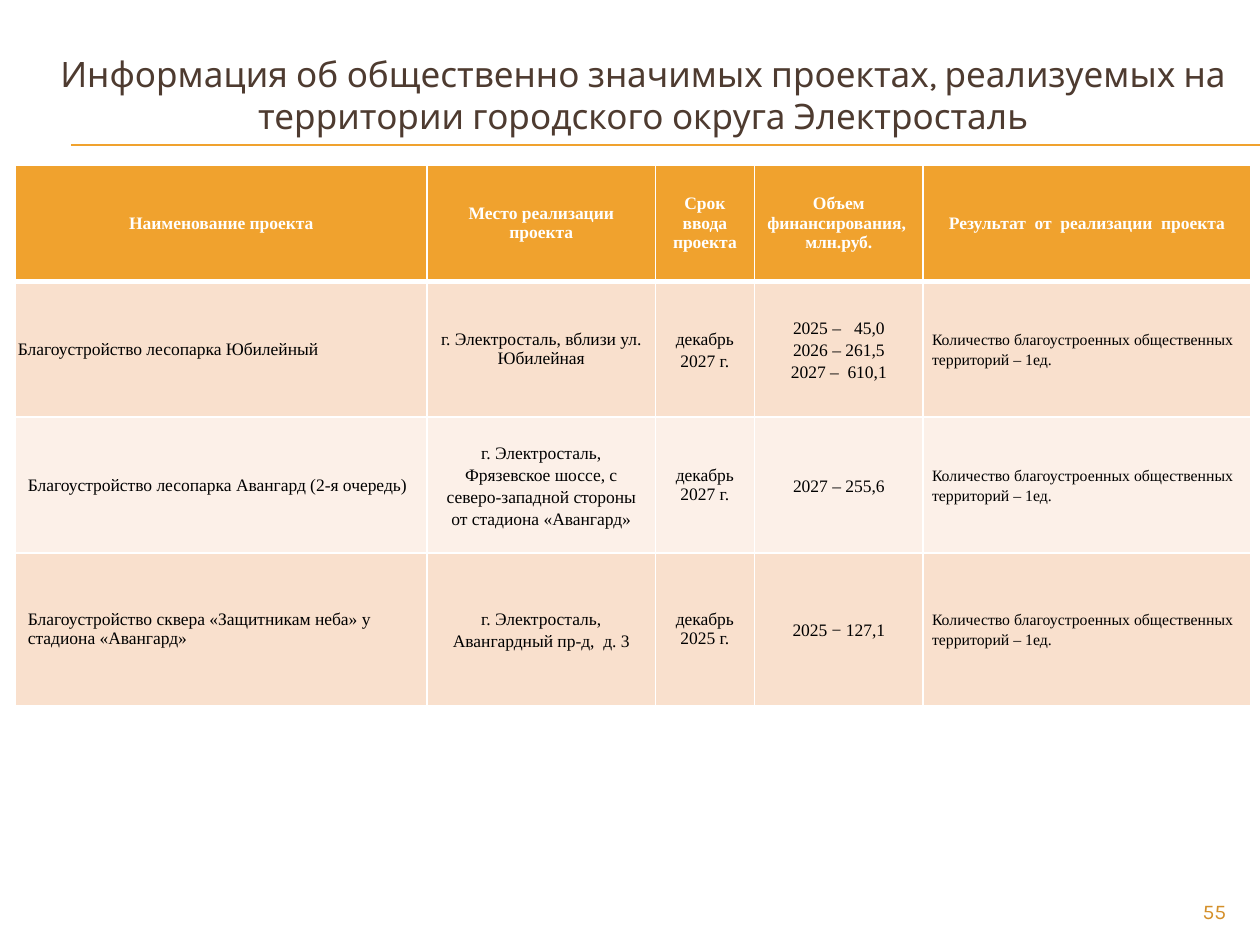
"""Build a slide with a table of public projects in a city district."""
from lxml.etree import SubElement
from pptx import Presentation
from pptx.dml.color import RGBColor
from pptx.enum.shapes import MSO_CONNECTOR
from pptx.enum.text import MSO_ANCHOR, PP_ALIGN
from pptx.oxml.ns import qn
from pptx.util import Cm, Pt

THEME = {
    "heading_font": "Karla", "table_font": "Times New Roman",
    "title": "4E3B30", "accent": "F0A22E", "number": "D48F29",
    "white": "FFFFFF", "black": "000000", "bands": ("F9E0CD", "FCF0E8"),
    "title_size": 20, "number_size": 12, "table_size": 10, "result_size": 9,
    "rule_width": 0.75, "border": 1, "header_border": 3,
}
TITLE = ("Информация об общественно значимых проектах, реализуемых на "
         "территории городского округа Электросталь")
PAGE_NUMBER = "55"
HEADER = ("Наименование проекта", "Место реализации проекта", "Срок ввода проекта",
          "Объем финансирования, \nмлн.руб.", "Результат  от  реализации  проекта")
RESULT = "Количество благоустроенных общественных территорий – 1ед."
PROJECTS = (
    ("Благоустройство лесопарка Юбилейный", "г. Электросталь, вблизи ул. Юбилейная",
     "декабрь 2027 г.", "2025 –   45,0\n2026 – 261,5\n2027 –  610,1", RESULT),
    ("Благоустройство лесопарка Авангард (2-я очередь)",
     "г. Электросталь, Фрязевское шоссе, с северо-западной стороны от стадиона «Авангард»",
     "декабрь 2027 г.", "2027 – 255,6", RESULT),
    ("Благоустройство сквера «Защитникам неба» у стадиона «Авангард»",
     "г. Электросталь, Авангардный пр-д,  д. 3", "декабрь 2025 г.", "2025 − 127,1", RESULT),
)
COLUMN_WIDTHS = (8.3, 4.6, 2, 3.4, 6.6)
ROW_HEIGHTS = (2.34, 2.74, 2.74, 3.07)
LINE_SPACING = (
    (1, 1, 1, 1, 1),
    (1, 1, 1.15, 1.15, 1.15),
    (1, 1.15, 1, 1.15, 1.15),
    (1, 1.15, 1, 1.15, 1.15),
)


def set_all(target, values):
    for name, value in values.items():
        setattr(target, name, value)


def write(frame, text, size, color, font, align, spacing=1, bold=False):
    for index, line in enumerate(text.split("\n")):
        para = frame.add_paragraph() if index else frame.paragraphs[0]
        set_all(para, {"alignment": align, "line_spacing": spacing})
        span = para.add_run()
        span.text = line
        set_all(span.font, {"size": Pt(size), "name": font, "bold": bold})
        span.font.color.rgb = RGBColor.from_string(color)


def add_text(page, place, text, anchor, *style):
    box = page.shapes.add_textbox(*map(Cm, place))
    set_all(box.text_frame, {"word_wrap": True, "vertical_anchor": anchor})
    write(box.text_frame, text, *style)


def add_rule(page, left, right, top):
    rule = page.shapes.add_connector(
        MSO_CONNECTOR.STRAIGHT, Cm(left), Cm(top), Cm(right), Cm(top))
    rule.line.color.rgb = RGBColor.from_string(THEME["accent"])
    rule.line.width = Pt(THEME["rule_width"])
    SubElement(rule.element.spPr, qn("a:effectLst"))


def paint_cell(cell, fill, widths):
    properties = cell._tc.get_or_add_tcPr()
    for side, width in widths.items():
        line = SubElement(properties, qn(f"a:ln{side}"), w=str(Pt(width)))
        solid = SubElement(line, qn("a:solidFill"))
        SubElement(solid, qn("a:srgbClr"), val=THEME["white"])
    cell.fill.solid()
    cell.fill.fore_color.rgb = RGBColor.from_string(fill)


def cell_margins(row, column):
    if row == 1 or (row and column == 4):
        side = 0.05 if column == 0 else 0.18
        return {"margin_left": Cm(side), "margin_right": Cm(side),
                "margin_top": 0, "margin_bottom": 0}
    return {}


def fill_cell(cell, row, column, text):
    thin, thick = THEME["border"], THEME["header_border"]
    widths = {"L": thin, "R": thin, "T": thick if row == 1 else thin,
              "B": thin if row else thick}
    fill = THEME["bands"][(row - 1) % 2] if row else THEME["accent"]
    paint_cell(cell, fill, widths)
    set_all(cell, {"vertical_anchor": MSO_ANCHOR.MIDDLE, **cell_margins(row, column)})
    write(cell.text_frame, text,
          THEME["result_size"] if row and column == 4 else THEME["table_size"],
          THEME["black"] if row else THEME["white"], THEME["table_font"],
          PP_ALIGN.LEFT if row and column in (0, 4) else PP_ALIGN.CENTER,
          LINE_SPACING[row][column], row == 0)


def add_projects(page):
    rows = (HEADER, *PROJECTS)
    table = page.shapes.add_table(
        len(rows), len(HEADER), Cm(0.31), Cm(3.33),
        Cm(sum(COLUMN_WIDTHS)), Cm(sum(ROW_HEIGHTS))).table
    for column, width in zip(table.columns, COLUMN_WIDTHS):
        column.width = Cm(width)
    for row, (texts, height) in enumerate(zip(rows, ROW_HEIGHTS)):
        table.rows[row].height = Cm(height)
        for column, text in enumerate(texts):
            fill_cell(table.cell(row, column), row, column, text)


def main():
    deck = Presentation()
    set_all(deck, {"slide_width": Cm(25.4), "slide_height": Cm(19.05)})
    page = deck.slides.add_slide(deck.slide_layouts[6])
    for top in (2.92, 2.94):
        add_rule(page, 1.43, 25.4, top)
    add_text(page, (0.9, 0.74, 24.13, 2.34), TITLE, MSO_ANCHOR.MIDDLE,
             THEME["title_size"], THEME["title"], THEME["heading_font"], PP_ALIGN.CENTER)
    add_projects(page)
    add_text(page, (22.86, 17.98, 2.11, 0.69), PAGE_NUMBER, MSO_ANCHOR.TOP,
             THEME["number_size"], THEME["number"], THEME["heading_font"], PP_ALIGN.RIGHT)
    deck.save("out.pptx")


if __name__ == "__main__":
    main()
